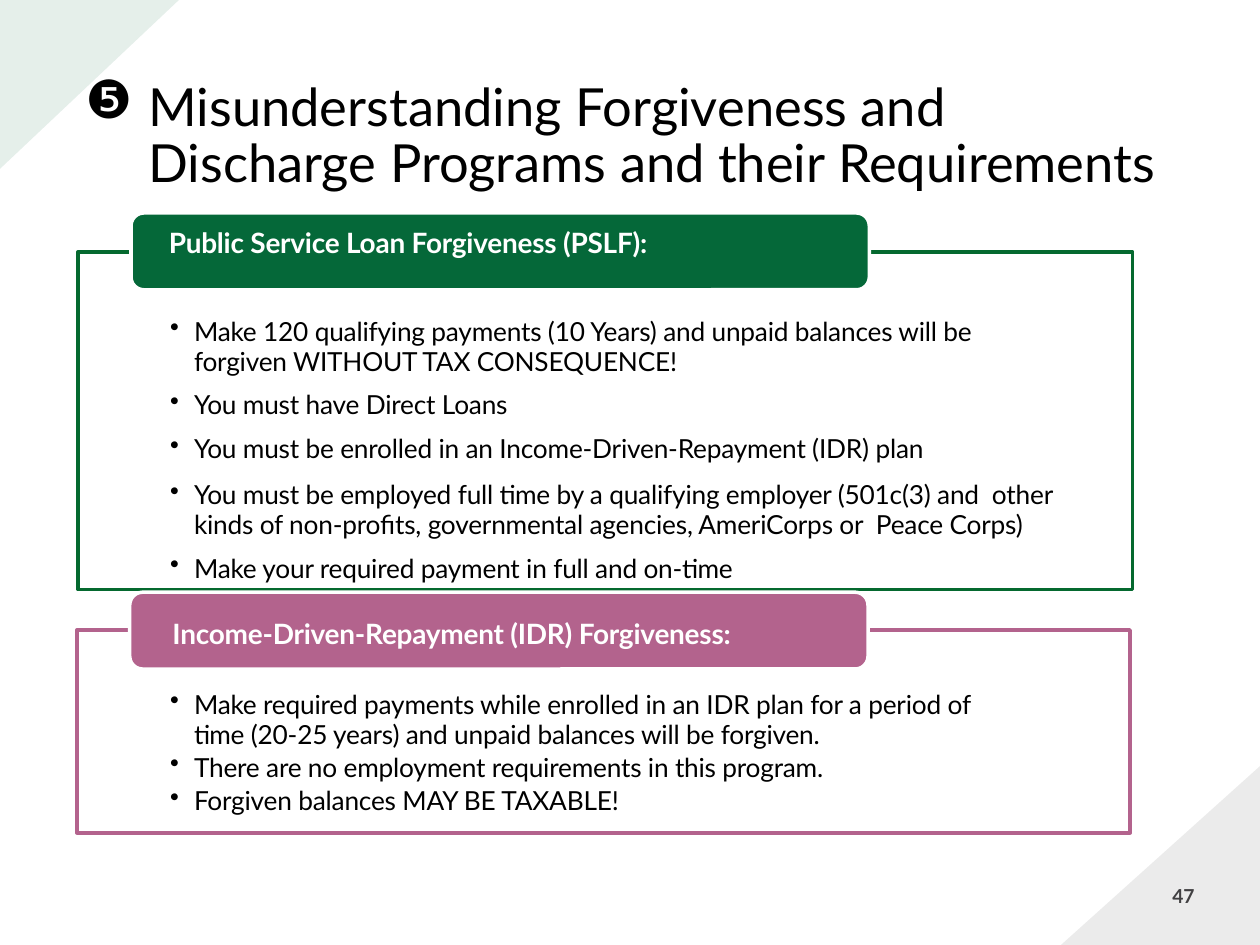
from dataclasses import dataclass

from lxml import etree
from pptx import Presentation
from pptx import util as u
from pptx.dml.color import RGBColor
from pptx.enum import shapes, text
from pptx.oxml.ns import qn


@dataclass(frozen=True)
class Theme:
    font: str = "Lato"
    green: str = "056839"
    green_line: str = "05692F"
    mauve: str = "B3638D"
    gray: str = "414042"
    white: str = "FFFFFF"
    black: str = "000000"
    title: float = 30
    heading: float = 16
    body: float = 15
    number: float = 11


theme = Theme()


def add_panel(kind, bounds, fill=None, line=None):
    """Add a preset shape with a solid fill and a 2 pt line, either optional."""
    shape = page.shapes.add_shape(kind, *map(u.Inches, bounds))
    shape.shadow.inherit = False
    if fill:
        shape.fill.solid()
        shape.fill.fore_color.rgb = RGBColor.from_string(fill)
    else:
        shape.fill.background()
    if line:
        shape.line.color.rgb = RGBColor.from_string(line)
        shape.line.width = u.Pt(2)
    else:
        shape.line.fill.background()
    return shape


def write(para, words, size, color, bold=False, tracking=0, bullet=None, indent=(0, 0), **layout):
    """Fill one paragraph; layout holds further paragraph attributes."""
    para.text = words
    if bullet:
        props = para._p.get_or_add_pPr()
        props.set("marL", str(u.Inches(indent[0])))
        props.set("indent", str(u.Inches(indent[1])))
        etree.SubElement(props, qn("a:buChar")).set("char", bullet)
    for name, value in layout.items():
        setattr(para, name, value)
    for span in para.runs:
        for name, value in dict(name=theme.font, size=u.Pt(size), bold=bold).items():
            setattr(span.font, name, value)
        span.font.color.rgb = RGBColor.from_string(color)
        if tracking:
            span._r.get_or_add_rPr().set("spc", str(tracking))


deck = Presentation()
deck.slide_width, deck.slide_height = u.Inches(10), u.Inches(7.5)
page = deck.slides.add_slide(deck.slide_layouts[6])

# Tinted corners
corners = [
    ((8.5, 6, 1.42, 1.58), 270, theme.gray),
    ((0.04, -0.04, 1.34, 1.42), 90, theme.green),
]
for bounds, angle, color in corners:
    corner = add_panel(shapes.MSO_SHAPE.RIGHT_TRIANGLE, bounds, fill=color)
    corner.rotation = angle
    tint = corner._element.spPr.find(qn("a:solidFill"))[0]
    etree.SubElement(tint, qn("a:alpha")).set("val", "10000")

# Title
box = page.shapes.add_textbox(*map(u.Inches, (0.58, 0.25, 8.83, 1.34)))
box.text_frame.word_wrap = True
box.text_frame.vertical_anchor = text.MSO_ANCHOR.BOTTOM
write(
    box.text_frame.paragraphs[0],
    "Misunderstanding Forgiveness and Discharge Programs and their Requirements",
    theme.title, theme.black, bullet="❺", indent=(0.5, -0.5), line_spacing=0.9,
)

# Programs: frame, heading tab and bullets (text, space before in points)
programs = [
    dict(
        heading="Public Service Loan Forgiveness (PSLF):",
        frame=(0.62, 2, 8.37, 2.68), line=theme.green_line, frame_fill=None,
        tab=(1.04, 1.69, 5.86, 0.61), color=theme.green, inset=(0.27, 0.07),
        list_box=(1.34, 2.51, 7.4, 2.17), after=6,
        bullets=[
            ("Make 120 qualifying payments (10 Years) and unpaid balances will be\v"
             "forgiven WITHOUT TAX CONSEQUENCE!", 0),
            ("You must have Direct Loans", 0.7),
            ("You must be enrolled in an Income-Driven-Repayment (IDR) plan", 0.9),
            ("You must be employed full time by a qualifying employer (501c(3) and  other "
             "kinds of non-profits, governmental agencies, AmeriCorps or  Peace Corps)", 3.1),
            ("Make your required payment in full and on-time", 0.7),
        ],
    ),
    dict(
        heading="Income-Driven-Repayment (IDR) Forgiveness:",
        frame=(0.61, 5, 8.36, 1.61), line=theme.mauve, frame_fill=theme.white,
        tab=(1.03, 4.7, 5.86, 0.61), color=theme.mauve, inset=(0.31, 0.16),
        list_box=(1.34, 5.47, 6.67, 1), after=0,
        bullets=[
            ("Make required payments while enrolled in an IDR plan for a period of "
             "time (20-25 years) and unpaid balances will be forgiven.", 0),
            ("There are no employment requirements in this program.", 0.7),
            ("Forgiven balances MAY BE TAXABLE!", 0.9),
        ],
    ),
]
for program in programs:
    add_panel(shapes.MSO_SHAPE.RECTANGLE, program["frame"], program["frame_fill"], program["line"])

    tab = add_panel(shapes.MSO_SHAPE.ROUNDED_RECTANGLE, program["tab"], program["color"], theme.white)
    left, top = map(u.Inches, program["inset"])
    tab_format = dict(margin_left=left, margin_top=top, margin_right=0, margin_bottom=0,
                      vertical_anchor=text.MSO_ANCHOR.TOP, word_wrap=True)
    for name, value in tab_format.items():
        setattr(tab.text_frame, name, value)
    write(tab.text_frame.paragraphs[0], program["heading"], theme.heading, theme.white,
          bold=True, tracking=-10, alignment=text.PP_ALIGN.LEFT)

    box = page.shapes.add_textbox(*map(u.Inches, program["list_box"]))
    box_format = dict(margin_left=0, margin_top=0, margin_right=0, margin_bottom=0, word_wrap=True)
    for name, value in box_format.items():
        setattr(box.text_frame, name, value)
    for index, (words, before) in enumerate(program["bullets"]):
        para = box.text_frame.add_paragraph() if index else box.text_frame.paragraphs[0]
        two_lines = len(words) > 70
        write(para, words, theme.body, theme.black, tracking=-10, bullet="•", indent=(0.2, -0.19),
              line_spacing=u.Pt(17.3) if two_lines else 1.0,
              space_before=u.Pt(before), space_after=u.Pt(program["after"]))

# Page number
box = page.shapes.add_textbox(*map(u.Inches, (7.33, 6.97, 2.25, 0.4)))
box.text_frame.word_wrap = True
write(box.text_frame.paragraphs[0], "47", theme.number, theme.gray, bold=True,
      alignment=text.PP_ALIGN.RIGHT)

deck.save("out.pptx")
